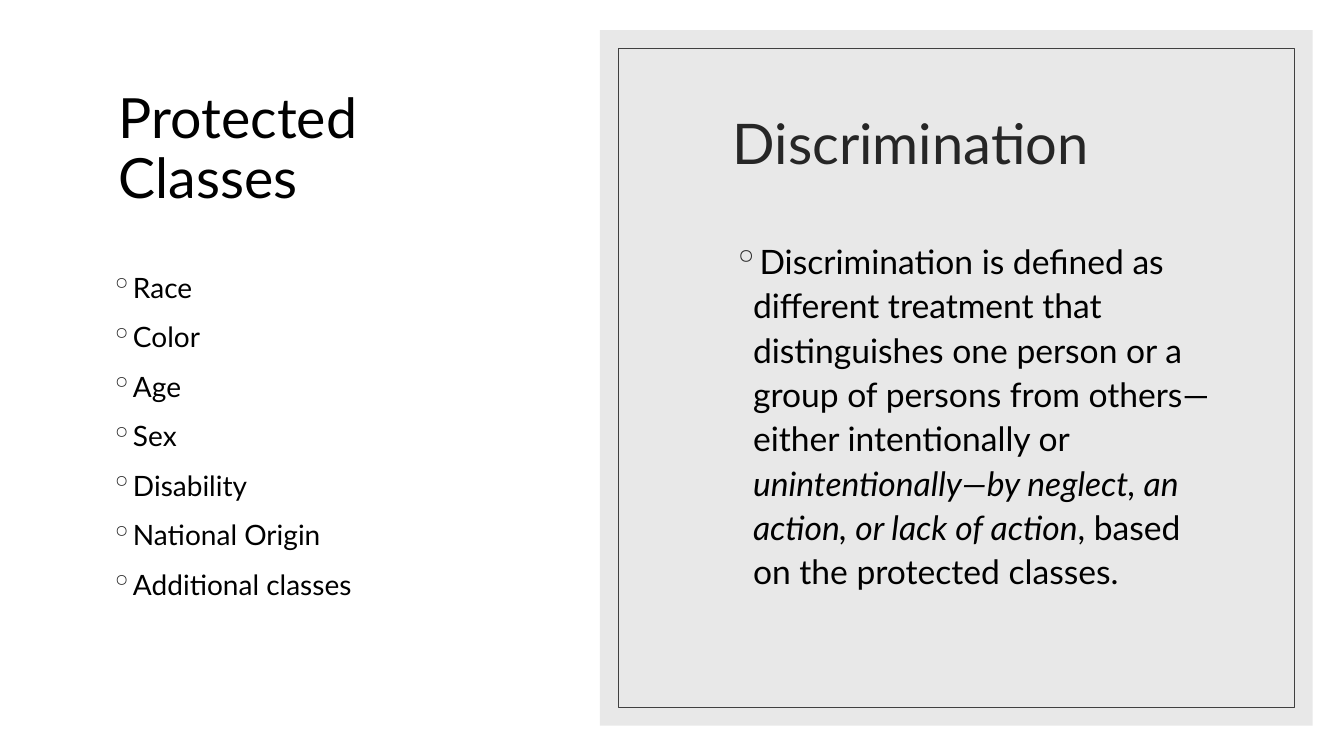
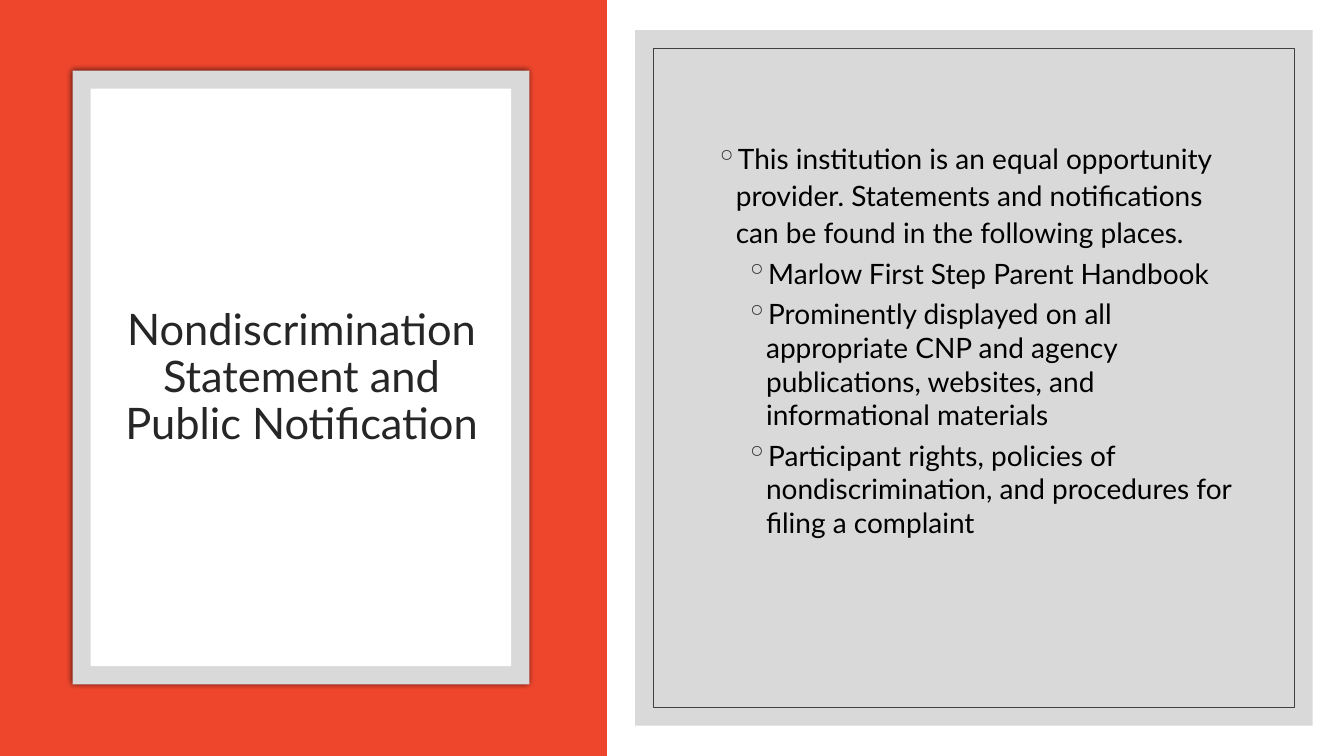
"""Build two slides on protected classes, discrimination and public notification."""
from lxml import etree
from pptx import Presentation
from pptx.dml.color import RGBColor
from pptx.enum.shapes import MSO_SHAPE
from pptx.enum.text import MSO_ANCHOR, PP_ALIGN
from pptx.oxml.ns import qn
from pptx.util import Inches, Pt

RECTANGLE = MSO_SHAPE.RECTANGLE
TOP, MIDDLE = MSO_ANCHOR.TOP, MSO_ANCHOR.MIDDLE
LEFT, CENTER = PP_ALIGN.LEFT, PP_ALIGN.CENTER

FONT = "Lato"
WHITE = RGBColor(0xFF, 0xFF, 0xFF)
BLACK = RGBColor(0x00, 0x00, 0x00)
INK = RGBColor(0x26, 0x26, 0x26)
FRAME = RGBColor(0x40, 0x40, 0x40)
PALE_GRAY = RGBColor(0xE8, 0xE8, 0xE8)
GRAY = RGBColor(0xD9, 0xD9, 0xD9)
RED = RGBColor(0xEE, 0x46, 0x2D)

BORDER = 0.18
PANEL_TOP, PANEL_RIGHT, PANEL_HEIGHT = 0.3, 13.02, 6.9
LEVEL_INDENTS = (0.2, 0.5)
LEVEL_LINE_SPACING = (1.1, 1.0)
LEVEL_SPACE_BEFORE = (9, 5)
HANGING = 0.2

CLASSES = ["Race", "Color", "Age", "Sex", "Disability", "National Origin",
           "Additional classes"]
DEFINITION = [
    ("Discrimination is defined as different treatment that distinguishes one "
     "person or a group of persons from others—either intentionally or ", False),
    ("unintentionally—by neglect, an action, or lack of action", True),
    (", based on the protected classes.", False),
]
NOTICE = ("This institution is an equal opportunity provider. Statements and "
          "notifications can be found in the following places.")
PLACES = [
    "Marlow First Step Parent Handbook",
    "Prominently displayed on all appropriate CNP and agency publications, "
    "websites, and informational materials",
    "Participant rights, policies of nondiscrimination, and procedures for "
    "filing a complaint",
]


def add_rectangle(slide, box, fill=None, line=None):
    """Add a flat rectangle with an optional fill and thin outline."""
    shape = slide.shapes.add_shape(RECTANGLE, *map(Inches, box))
    shape.shadow.inherit = False
    if fill is None:
        shape.fill.background()
    else:
        shape.fill.solid()
        shape.fill.fore_color.rgb = fill
    if line is None:
        shape.line.fill.background()
    else:
        shape.line.color.rgb = line
        shape.line.width = Pt(0.5)
    return shape


def add_bordered(slide, box, outer_fill, **inner_style):
    """Add a rectangle holding a second one inset by the border width."""
    left, top, width, height = box
    outer = add_rectangle(slide, box, outer_fill)
    add_rectangle(slide, (left + BORDER, top + BORDER, width - 2 * BORDER,
                          height - 2 * BORDER), **inner_style)
    return outer


def add_panel(slide, left, fill):
    """Add the framed panel that reaches the right margin."""
    add_bordered(slide, (left, PANEL_TOP, PANEL_RIGHT - left, PANEL_HEIGHT),
                 fill, line=FRAME)


def add_glow_shadow(shape):
    """Give a shape a soft black shadow on all sides."""
    effects = shape._element.spPr.find(qn("a:effectLst"))
    shadow = etree.SubElement(effects, qn("a:outerShdw"), blurRad=str(Pt(4)),
                              dist="0", dir="0", algn="ctr", rotWithShape="0")
    color = etree.SubElement(shadow, qn("a:srgbClr"), val=str(BLACK))
    etree.SubElement(color, qn("a:alpha"), val="66000")


def add_text_frame(slide, box, anchor):
    """Add a wrapping text box and return its text frame."""
    frame = slide.shapes.add_textbox(*map(Inches, box)).text_frame
    frame.word_wrap = True
    frame.vertical_anchor = anchor
    return frame


def style_font(paragraph, size, color):
    """Set the font of a whole paragraph."""
    paragraph.font.name = FONT
    paragraph.font.size = Pt(size)
    paragraph.font.color.rgb = color


def add_title(slide, box, text, size, color=INK, alignment=LEFT):
    """Add a vertically centred title."""
    paragraph = add_text_frame(slide, box, MIDDLE).paragraphs[0]
    paragraph.text = text
    paragraph.alignment = alignment
    paragraph.line_spacing = 0.9
    style_font(paragraph, size, color)


def set_bullet(paragraph, level):
    """Give a paragraph the hanging bullet and spacing of its level."""
    paragraph.level = level
    paragraph.line_spacing = LEVEL_LINE_SPACING[level]
    paragraph.space_before = Pt(LEVEL_SPACE_BEFORE[level])
    properties = paragraph._p.get_or_add_pPr()
    properties.set("marL", str(Inches(LEVEL_INDENTS[level])))
    properties.set("indent", str(-Inches(HANGING)))
    color = etree.SubElement(properties, qn("a:buClr"))
    etree.SubElement(color, qn("a:srgbClr"), val=str(INK))
    etree.SubElement(properties, qn("a:buChar"), char="◦")


def add_bullets(slide, box, items, size, anchor=MIDDLE):
    """Add bullets from (level, [(text, italic), ...]) items."""
    frame = add_text_frame(slide, box, anchor)
    for index, (level, runs) in enumerate(items):
        paragraph = frame.add_paragraph() if index else frame.paragraphs[0]
        set_bullet(paragraph, level)
        style_font(paragraph, size, BLACK)
        for text, italic in runs:
            run = paragraph.add_run()
            run.text = text
            if italic:
                run.font.italic = True


def plain_items(level, texts):
    """Turn plain texts into bullet items of one level."""
    return [(level, [(text, False)]) for text in texts]


def build_classes_slide(slide):
    """Build the slide on protected classes and discrimination."""
    add_title(slide, (1.08, 0.7, 3.82, 1.59), "Protected Classes", 39.6, BLACK)
    add_panel(slide, 5.95, PALE_GRAY)
    add_bullets(slide, (1, 2.2, 5.66, 4.21), plain_items(0, CLASSES), 20)
    add_title(slide, (7.17, 0.7, 4.99, 1.5), "Discrimination", 40)
    add_bullets(slide, (7.17, 2.3, 4.99, 4.21), [(0, DEFINITION)], 24, TOP)


def build_notification_slide(slide):
    """Build the slide on the nondiscrimination statement."""
    add_rectangle(slide, (0, 0, 6.02, 7.5), RED)
    card = add_bordered(slide, (0.72, 0.7, 4.53, 6.09), GRAY, fill=WHITE)
    add_glow_shadow(card)
    add_title(slide, (1.08, 1.3, 3.82, 4.91),
              "Nondiscrimination Statement and Public Notification", 31,
              alignment=CENTER)
    add_panel(slide, 6.3, GRAY)
    add_bullets(slide, (7, 1.02, 5.33, 4.68),
                plain_items(0, [NOTICE]) + plain_items(1, PLACES), 20)


def main():
    """Create and save the presentation."""
    presentation = Presentation()
    presentation.slide_width = Inches(13.33)
    presentation.slide_height = Inches(7.5)
    blank_layout = presentation.slide_layouts[6]
    for build in (build_classes_slide, build_notification_slide):
        build(presentation.slides.add_slide(blank_layout))
    presentation.save("out.pptx")


if __name__ == "__main__":
    main()
